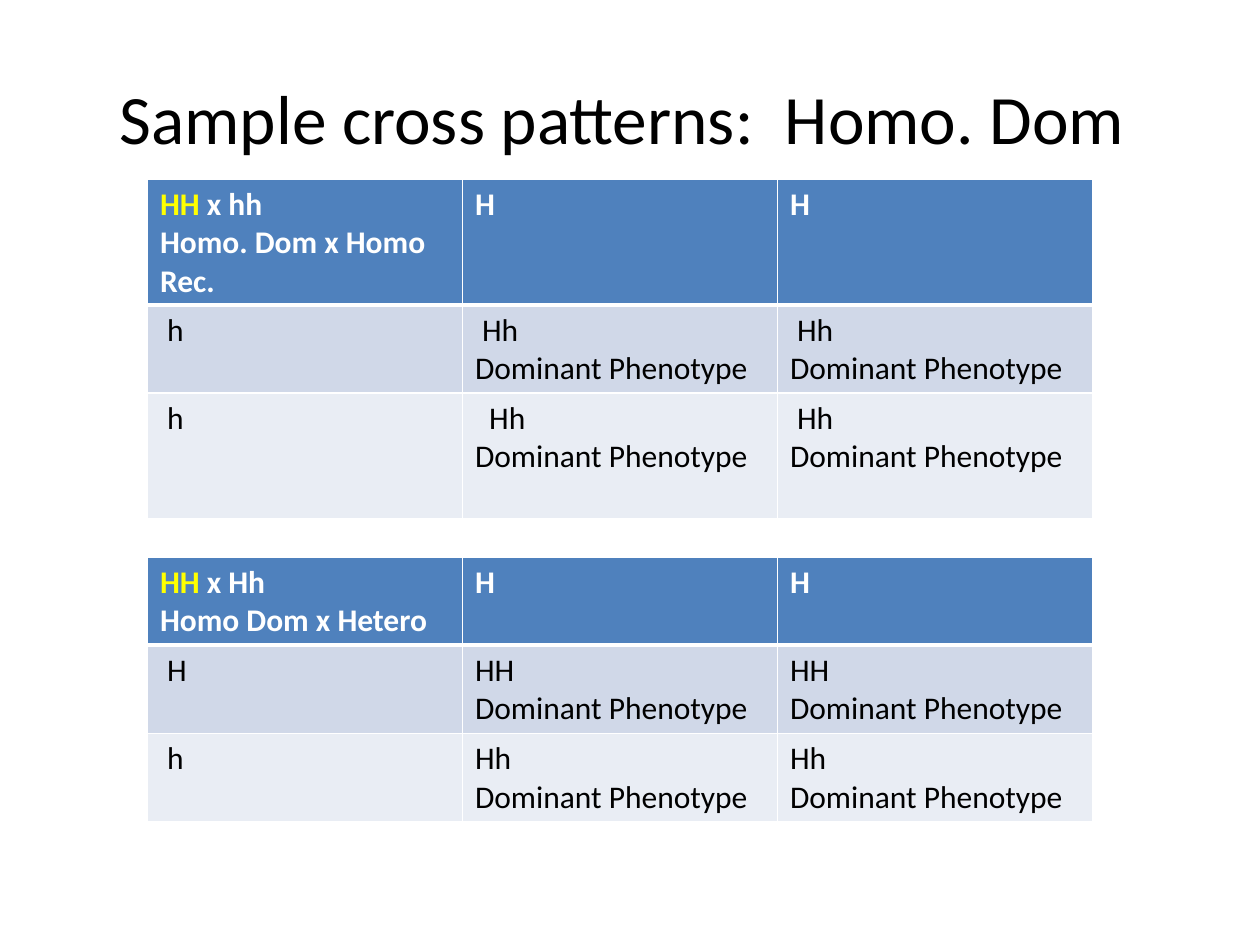
import pptx
import pptx.util
import pptx.dml.color
import pptx.enum.text
import pptx.oxml
import pptx.oxml.ns

Inches, Pt = pptx.util.Inches, pptx.util.Pt
RGB = pptx.dml.color.RGBColor.from_string

COLORS = {"text": "000000", "head": "4F81BD", "odd": "D0D8E8",
          "even": "E9EDF4", "white": "FFFFFF", "parent": "FFFF00"}
FONT = "Calibri"
TITLE = "Sample cross patterns:  Homo. Dom "
DOM = "\nDominant Phenotype"
LEFT, COL = 1.17, 2.5

# Each cross: top, row heights, and rows; the first word of a corner is the parent.
CROSSES = [
    (1.42, [1, 0.7, 1], [
        ["HH x hh\nHomo. Dom x Homo Rec.", "H", "H"],
        [" h", " Hh" + DOM, " Hh" + DOM],
        [" h", "  Hh" + DOM, " Hh" + DOM]]),
    (4.42, [0.7, 0.7, 0.7], [
        ["HH x Hh\nHomo Dom x Hetero", "H", "H"],
        [" H", "HH" + DOM, "HH" + DOM],
        [" h", "Hh" + DOM, "Hh" + DOM]]),
]


def style(par, size, color, bold=False):
    font = par.font
    font.name, font.size, font.bold = FONT, Pt(size), bold
    font.color.rgb = RGB(COLORS[color])


def border(cell, row):
    """Draw white cell edges, thick between the head row and the body."""
    wide = {0: "lnB", 1: "lnT"}.get(row)
    props = cell._tc.get_or_add_tcPr()
    for spot, side in enumerate(["lnL", "lnR", "lnT", "lnB"]):
        width = Pt(3 if side == wide else 1)
        props.insert(spot, pptx.oxml.parse_xml(
            f'<a:{side} {pptx.oxml.ns.nsdecls("a")} w="{width}"><a:solidFill>'
            f'<a:srgbClr val="{COLORS["white"]}"/></a:solidFill></a:{side}>'))


def add_cross(slide, top, heights, rows):
    cols = len(rows[0])
    table = slide.shapes.add_table(
        len(rows), cols, Inches(LEFT), Inches(top),
        Inches(COL * cols), Inches(sum(heights))).table
    for r, (height, row) in enumerate(zip(heights, rows)):
        table.rows[r].height = Inches(height)
        for c, text in enumerate(row):
            cell = table.cell(r, c)
            cell.text = text
            cell.fill.solid()
            cell.fill.fore_color.rgb = RGB(COLORS[("head", "odd", "even")[r]])
            border(cell, r)
            for par in cell.text_frame.paragraphs:
                style(par, 18, "text" if r else "white", r == 0)
    par = table.cell(0, 0).text_frame.paragraphs[0]
    parent, rest = par.text.split(" ", 1)
    par.runs[0].text = parent
    par.runs[0].font.color.rgb = RGB(COLORS["parent"])
    par.add_run().text = " " + rest


def main():
    deck = pptx.Presentation()
    deck.slide_width, deck.slide_height = Inches(10), Inches(7.5)
    slide = deck.slides.add_slide(deck.slide_layouts[6])
    frame = slide.shapes.add_textbox(
        Inches(0.5), Inches(0.3), Inches(9), Inches(1.25)).text_frame
    frame.word_wrap = True
    frame.vertical_anchor = pptx.enum.text.MSO_ANCHOR.MIDDLE
    frame.text = TITLE
    style(frame.paragraphs[0], 39.6, "text")
    frame.paragraphs[0].alignment = pptx.enum.text.PP_ALIGN.CENTER
    for cross in CROSSES:
        add_cross(slide, *cross)
    deck.save("out.pptx")


if __name__ == "__main__":
    main()
